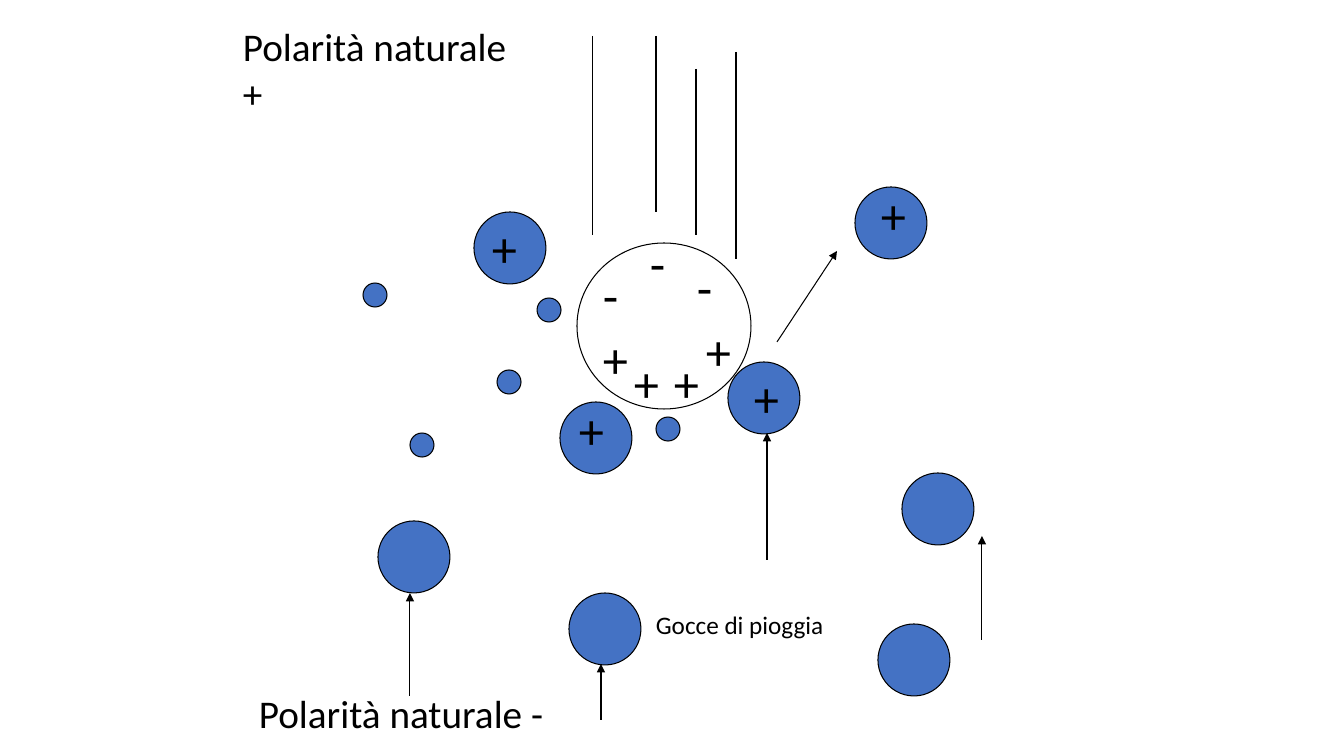
from lxml import etree
from pptx import Presentation
from pptx.dml.color import RGBColor
from pptx.enum.shapes import MSO_CONNECTOR, MSO_SHAPE
from pptx.oxml.ns import qn
from pptx.util import Pt

PX = 914400 / 100.8
BLACK = RGBColor(0x00, 0x00, 0x00)
WHITE = RGBColor(0xFF, 0xFF, 0xFF)
BLUE = RGBColor(0x44, 0x72, 0xC4)
OVAL = MSO_SHAPE.OVAL
STRAIGHT = MSO_CONNECTOR.STRAIGHT
FONT = "Calibri"
LINE_WIDTH = Pt(0.75)

LARGE = 72
SMALL = 24
LARGE_DROPLETS = [(368, 182), (495, 7), (209, 413), (114, 32),
                  (200, 222), (518, 444), (18, 341), (542, 293)]
SMALL_DROPLETS = [(296, 237), (137, 190), (50, 253), (3, 103), (177, 118)]
DROPLET_CHARGES = [(209, 214), (511, -1), (384, 182), (122, 32)]
RISING_ARROWS = [(50, 516, 50, 413), (241, 540, 241, 484), (407, 380, 407, 253),
                 (622, 460, 622, 356), (417, 162, 477, 71)]
STREAKS = [(16, 0, 199), (79, 0, 176), (119, 33, 199), (159, 16, 223)]
DROP_HEIGHT = 166
DROP_PLUSES = [(119, 279), (16, 287), (87, 311), (47, 311)]
DROP_MINUSES = [(110, 215), (63, 191), (16, 223)]


def emu(*lengths):
    """Turn lengths in px into EMU."""
    return [round(length * PX) for length in lengths]


def add_circle(page, left, top, width, height, color):
    """Draw one outlined ellipse."""
    circle = page.shapes.add_shape(OVAL, *emu(left, top, width, height))
    circle.shadow.inherit = False
    circle.fill.solid()
    circle.fill.fore_color.rgb = color
    circle.line.color.rgb = BLACK
    circle.line.width = LINE_WIDTH


def add_line(page, start_x, start_y, end_x, end_y, arrow=False):
    """Draw a thin line, with an arrowhead at its end if asked."""
    line = page.shapes.add_connector(STRAIGHT, *emu(start_x, start_y, end_x, end_y))
    line.line.color.rgb = BLACK
    line.line.width = LINE_WIDTH
    if arrow:
        etree.SubElement(line.line._get_or_add_ln(), qn("a:tailEnd"), type="triangle")
    etree.SubElement(line._element.spPr, qn("a:effectLst"))


def add_text(page, left, top, width, height, text, size, wrap=False):
    """Write one paragraph in a text box."""
    box = page.shapes.add_textbox(*emu(left, top, width, height))
    box.text_frame.word_wrap = wrap
    box.text_frame.text = text
    font = box.text_frame.paragraphs[0].runs[0].font
    font.name = FONT
    font.size = Pt(size)
    font.color.rgb = BLACK


def add_signs(page, left, top, places, sign, width):
    """Write the same charge sign at each place."""
    for x, y in places:
        add_text(page, left + x, top + y, width, 72, sign, 36)


def add_droplets(page, left, top):
    """Draw the blue droplets with their charges and arrows."""
    for places, size in ((LARGE_DROPLETS, LARGE), (SMALL_DROPLETS, SMALL)):
        for x, y in places:
            add_circle(page, left + x, top + y, size, size, BLUE)
    add_signs(page, left, top, DROPLET_CHARGES, "+", 54)
    for start_x, start_y, end_x, end_y in RISING_ARROWS:
        add_line(page, left + start_x, top + start_y, left + end_x, top + end_y, True)


def add_falling_drop(page, left, top, width, height):
    """Draw the polarised drop at the foot of its box, under its streaks."""
    add_circle(page, left, top + height - DROP_HEIGHT, width, DROP_HEIGHT, WHITE)
    for x, start, end in STREAKS:
        add_line(page, left + x, top + start, left + x, top + end)
    add_signs(page, left, top, DROP_PLUSES, "+", 54)
    add_signs(page, left, top, DROP_MINUSES, "-", 37)


def add_labels(page, left, top):
    """Write the two polarity labels and the raindrop label."""
    add_text(page, left, top, 304, 57, "Polarità naturale +", 28, True)
    add_text(page, left + 16, top + 667, 320, 57, "Polarità naturale -", 28, True)
    add_text(page, left + 413, top + 587, 190, 40, "Gocce di pioggia", 18)


def main():
    """Build the slide and save it."""
    deck = Presentation()
    deck.slide_width, deck.slide_height = emu(1344, 756)
    page = deck.slides.add_slide(deck.slide_layouts[6])
    add_droplets(page, 360, 180)
    add_falling_drop(page, 577, 36, 174, 373)
    add_labels(page, 233, 17)
    deck.save("out.pptx")


if __name__ == "__main__":
    main()
